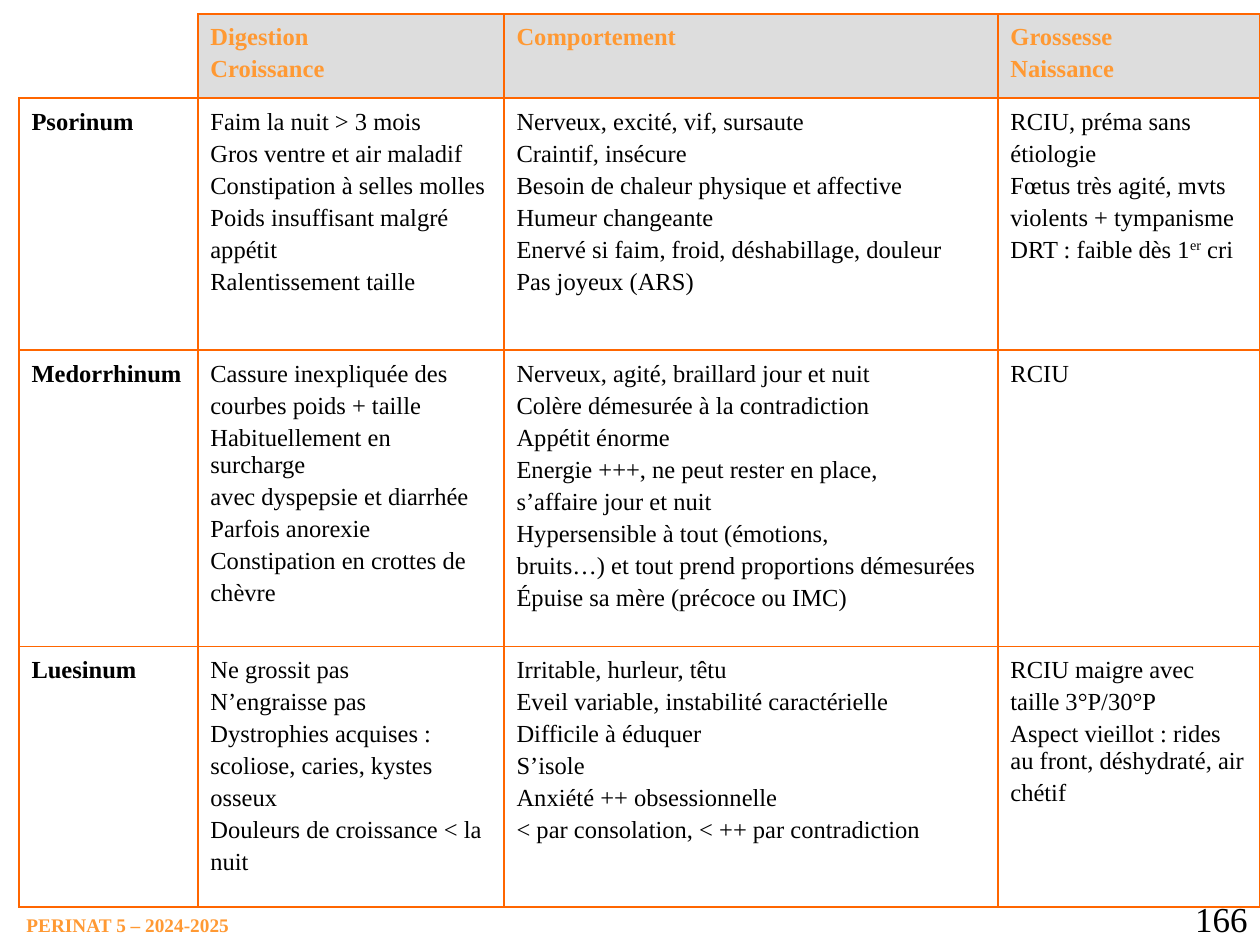
from lxml.etree import SubElement
from pptx import Presentation
from pptx.dml.color import RGBColor
from pptx.enum.text import PP_ALIGN
from pptx.oxml.ns import qn
from pptx.util import Inches, Pt

FACE = "Times New Roman"
AMBER, BLACK, GREY, EDGE = "FF9933", "000000", "DDDDDD", "FF6600"
COLS = [1.42, 2.43, 3.92, 2.08]
ROWS = [0.67, 2, 2.35, 2.07]
HEAD = ["", "Digestion\nCroissance", "Comportement", "Grossesse\nNaissance"]
BODY = [
    ["Psorinum",
     """Faim la nuit > 3 mois
Gros ventre et air maladif
Constipation à selles molles
Poids insuffisant malgré
appétit
Ralentissement taille""",
     """Nerveux, excité, vif, sursaute
Craintif, insécure
Besoin de chaleur physique et affective
Humeur changeante
Enervé si faim, froid, déshabillage, douleur
Pas joyeux (ARS)""",
     """RCIU, préma sans
étiologie
Fœtus très agité, mvts
violents + tympanisme
DRT : faible dès 1^er^ cri"""],
    ["Medorrhinum",
     """Cassure inexpliquée des
courbes poids + taille
Habituellement en surcharge
avec dyspepsie et diarrhée
Parfois anorexie
Constipation en crottes de
chèvre""",
     """Nerveux, agité, braillard jour et nuit
Colère démesurée à la contradiction
Appétit énorme
Energie +++, ne peut rester en place,
s’affaire jour et nuit
Hypersensible à tout (émotions,
bruits…) et tout prend proportions démesurées
Épuise sa mère (précoce ou IMC)""",
     "RCIU"],
    ["Luesinum",
     """Ne grossit pas
N’engraisse pas
Dystrophies acquises :
scoliose, caries, kystes
osseux
Douleurs de croissance < la
nuit""",
     """Irritable, hurleur, têtu
Eveil variable, instabilité caractérielle
Difficile à éduquer
S’isole
Anxiété ++ obsessionnelle
< par consolation, < ++ par contradiction""",
     """RCIU maigre avec
taille 3°P/30°P
Aspect vieillot : rides au front, déshydraté, air
chétif"""],
]


def style(font, size, hue, bold=False):
    font.name, font.size, font.bold = FACE, Pt(size), bold
    font.color.rgb = RGBColor.from_string(hue)


def write(frame, text, size, hue, bold=False, gap=0):
    for i, line in enumerate(text.split("\n")):
        para = frame.add_paragraph() if i else frame.paragraphs[0]
        para.space_before = Pt(gap)
        style(para.font, size, hue, bold)
        for j, part in enumerate(line.split("^")):
            run = para.add_run()
            run.text = part
            style(run.font, size, hue, bold)
            if j % 2:
                run.font._element.set("baseline", "30000")


def border(cell, bare):
    props = cell._tc.get_or_add_tcPr()
    for side in "LRTB":
        line = SubElement(props, qn("a:ln" + side), w=str(Pt(1)))
        if side in bare:
            SubElement(line, qn("a:noFill"))
        else:
            fill = SubElement(line, qn("a:solidFill"))
            SubElement(fill, qn("a:srgbClr"), val=EDGE)


def label(slide, box, text, size, hue, bold=False):
    frame = slide.shapes.add_textbox(*map(Inches, box)).text_frame
    write(frame, text, size, hue, bold)
    return frame


def grid(slide):
    box = map(Inches, (0.15, 0.11, sum(COLS), sum(ROWS)))
    table = slide.shapes.add_table(len(ROWS), len(COLS), *box).table
    table.first_row = table.horz_banding = False
    for col, wide in zip(table.columns, COLS):
        col.width = Inches(wide)
    for r, texts in enumerate([HEAD] + BODY):
        table.rows[r].height = Inches(ROWS[r])
        for c, text in enumerate(texts):
            cell = table.cell(r, c)
            cell.margin_left = cell.margin_right = Inches(0.1)
            cell.margin_top = cell.margin_bottom = Inches(0.08)
            border(cell, "" if r or c else "LT")
            if r or not c:
                cell.fill.background()
            else:
                cell.fill.solid()
                cell.fill.fore_color.rgb = RGBColor.from_string(GREY)
            if text:
                write(cell.text_frame, text, 14, BLACK if r else AMBER,
                      not (r and c), 2.8 if c else 0)


def main():
    deck = Presentation()
    deck.slide_width, deck.slide_height = Inches(10), Inches(7.5)
    slide = deck.slides.add_slide(deck.slide_layouts[6])
    foot = label(slide, (0.21, 7.25, 1.64, 0.19), "PERINAT 5 – 2024-2025",
                 11, AMBER, True)
    foot.word_wrap = False
    foot.margin_left = foot.margin_right = 0
    foot.margin_top = foot.margin_bottom = 0
    page = label(slide, (9.17, 7.07, 0.83, 0.43), "166", 20, BLACK)
    page.word_wrap = True
    page.paragraphs[0].alignment = PP_ALIGN.RIGHT
    grid(slide)
    deck.save("out.pptx")


if __name__ == "__main__":
    main()
